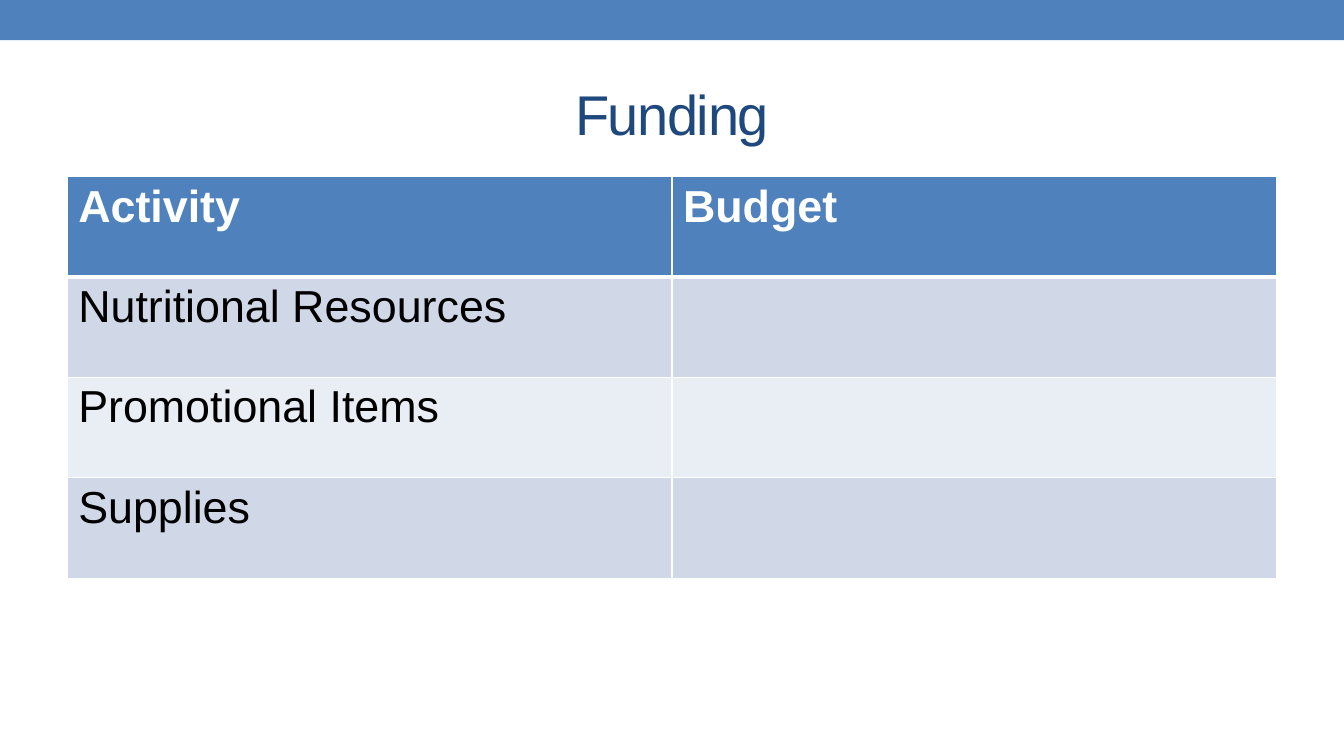
"""Build the Funding slide with its activity and budget table."""
from dataclasses import dataclass

import lxml.etree
import pptx
import pptx.dml.color
import pptx.enum.shapes
import pptx.enum.text
import pptx.oxml.ns
import pptx.slide
import pptx.table
import pptx.text.text
import pptx.util

Pt = pptx.util.Pt
RGB = pptx.dml.color.RGBColor.from_string


@dataclass(frozen=True)
class Theme:
    font: str = "Arial"
    accent: str = "4F81BD"
    title: str = "1F497D"
    light: str = "FFFFFF"
    dark: str = "000000"
    bands: tuple[str, str] = ("D0D8E8", "E9EDF4")
    title_size: float = 40
    table_size: float = 32


@dataclass(frozen=True)
class TableRow:
    activity: str
    budget: str
    fill: str
    color: str
    bold: bool = False
    bottom: float = 1


THEME = Theme()
WIDTH, HEIGHT = 960, 540
MARGIN = 48
TABLE_WIDTH = WIDTH - 2 * MARGIN
ROW_HEIGHT = 71.75
ACTIVITIES = ("Nutritional Resources", "Promotional Items", "Supplies")
ROWS = [TableRow("Activity", "Budget", THEME.accent, THEME.light, True, 3)] + [
    TableRow(name, "", THEME.bands[i % 2], THEME.dark)
    for i, name in enumerate(ACTIVITIES)
]


def add_run(p: pptx.text.text._Paragraph, text: str, size: float, color: str,
            bold: bool = False) -> pptx.text.text._Run:
    """Add one formatted run to a paragraph."""
    r = p.add_run()
    r.text = text
    r.font.name = THEME.font
    r.font.size = Pt(size)
    r.font.bold = bold
    r.font.color.rgb = RGB(color)
    return r


def add_banner(s: pptx.slide.Slide) -> None:
    """Draw the band across the top."""
    sp = s.shapes.add_shape(pptx.enum.shapes.MSO_SHAPE.RECTANGLE,
                            Pt(0), Pt(0), Pt(WIDTH), Pt(28.8))
    sp.shadow.inherit = False
    sp.fill.solid()
    sp.fill.fore_color.rgb = RGB(THEME.accent)
    sp.line.fill.background()


def add_title(s: pptx.slide.Slide, text: str) -> None:
    """Add the centred, slightly condensed title."""
    sp = s.shapes.add_textbox(Pt(MARGIN), Pt(42), Pt(TABLE_WIDTH), Pt(78))
    tf = sp.text_frame
    tf.word_wrap = True
    tf.vertical_anchor = pptx.enum.text.MSO_ANCHOR.MIDDLE
    p = tf.paragraphs[0]
    p.alignment = pptx.enum.text.PP_ALIGN.CENTER
    r = add_run(p, text, THEME.title_size, THEME.title)
    r.font._element.set("spc", "-100")


def set_borders(cell: pptx.table._Cell, bottom: float, top: float) -> None:
    """Draw white lines on the four sides of a cell."""
    qn = pptx.oxml.ns.qn
    tc_pr = cell._tc.get_or_add_tcPr()
    for side, width in (("L", 1), ("R", 1), ("T", top), ("B", bottom)):
        ln = lxml.etree.SubElement(tc_pr, qn(f"a:ln{side}"), w=str(Pt(width)))
        fill = lxml.etree.SubElement(ln, qn("a:solidFill"))
        lxml.etree.SubElement(fill, qn("a:srgbClr"), val=THEME.light)


def fill_cell(cell: pptx.table._Cell, text: str, row: TableRow, top: float) -> None:
    """Format one cell and write its text."""
    set_borders(cell, row.bottom, top)
    cell.margin_left = cell.margin_right = Pt(7.92)
    cell.margin_top = cell.margin_bottom = Pt(3.6)
    cell.fill.solid()
    cell.fill.fore_color.rgb = RGB(row.fill)
    if text:
        add_run(cell.text_frame.paragraphs[0], text, THEME.table_size,
                row.color, row.bold)


def add_budget_table(s: pptx.slide.Slide, rows: list[TableRow]) -> None:
    """Add the table of activities and budgets."""
    table = s.shapes.add_table(len(rows), 2, Pt(MARGIN), Pt(126), Pt(TABLE_WIDTH),
                               Pt(ROW_HEIGHT * len(rows))).table
    table.horz_banding = False
    top = 1
    for i, row in enumerate(rows):
        table.rows[i].height = Pt(ROW_HEIGHT)
        for j, text in enumerate((row.activity, row.budget)):
            fill_cell(table.cell(i, j), text, row, top)
        top = row.bottom


def main() -> None:
    """Build and save the presentation."""
    prs = pptx.Presentation()
    prs.slide_width, prs.slide_height = Pt(WIDTH), Pt(HEIGHT)
    s = prs.slides.add_slide(prs.slide_layouts[6])
    add_banner(s)
    add_title(s, "Funding")
    add_budget_table(s, ROWS)
    prs.save("out.pptx")


if __name__ == "__main__":
    main()
